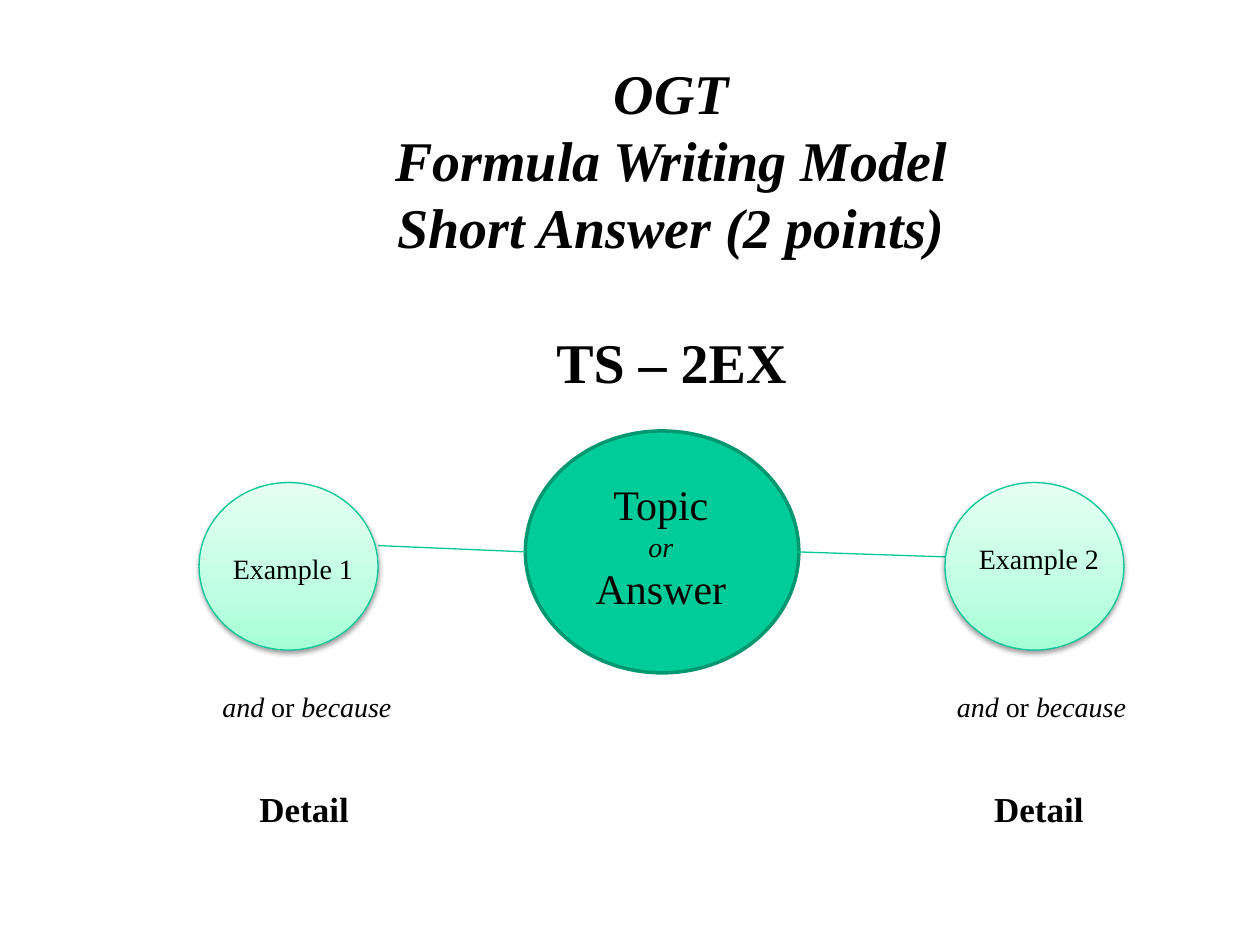
from typing import NamedTuple

from lxml import etree
from pptx import Presentation
from pptx.dml.color import RGBColor
from pptx.enum.shapes import MSO_CONNECTOR, MSO_SHAPE
from pptx.enum.text import MSO_ANCHOR, MSO_AUTO_SIZE, PP_ALIGN
from pptx.oxml import parse_xml
from pptx.oxml.ns import qn
from pptx.util import Inches, Pt

OVAL = MSO_SHAPE.OVAL
LINE = MSO_CONNECTOR.STRAIGHT
LEFT, CENTER = PP_ALIGN.LEFT, PP_ALIGN.CENTER
MIDDLE = MSO_ANCHOR.MIDDLE
FIXED = MSO_AUTO_SIZE.NONE

FONT = "Times New Roman"
BLACK, TEAL, DARK, EDGE = "000000", "00CC99", "009771", "00C896"
MINT = [(0, "A5FFD6"), (35, "BFFFE2"), (100, "E7FFF3")]
NS = 'xmlns:a="http://schemas.openxmlformats.org/drawingml/2006/main"'


class Span(NamedTuple):
    text: str
    size: float
    bold: bool = False
    italic: bool = False


class Branch(NamedTuple):
    name: str
    left: float
    label: tuple[float, float]
    note: tuple[float, float]
    start: tuple[float, float]
    end: tuple[float, float]


BRANCHES = [
    Branch("Example 1", 1.58, (1.75, 4.33), (1.5, 5.42), (3, 4.33), (4.17, 4.38)),
    Branch("Example 2", 7.5, (7.67, 4.25), (7.33, 5.42), (6.33, 4.38), (7.5, 4.42)),
]


def rgb(code: str) -> RGBColor:
    return RGBColor.from_string(code)


def write(para, spans: list[Span], align=LEFT) -> None:
    para.alignment = align
    for span in spans:
        run = para.add_run()
        run.text = span.text
        font = run.font
        font.name, font.size = FONT, Pt(span.size)
        font.bold, font.italic = span.bold, span.italic
        font.color.rgb = rgb(BLACK)


def add_text(slide, left: float, top: float, width: float, height: float,
             lines: list[list[Span]], align=LEFT):
    box = slide.shapes.add_textbox(*map(Inches, (left, top, width, height)))
    frame = box.text_frame
    frame.word_wrap = True
    for i, spans in enumerate(lines):
        para = frame.add_paragraph() if i else frame.paragraphs[0]
        write(para, spans, align)
    return frame


def add_oval(slide, left: float, top: float, width: float, height: float,
             edge: str, weight: float):
    oval = slide.shapes.add_shape(OVAL, *map(Inches, (left, top, width, height)))
    oval.shadow.inherit = False
    oval.fill.solid()
    oval.fill.fore_color.rgb = rgb(TEAL)
    oval.line.color.rgb = rgb(edge)
    oval.line.width = Pt(weight)
    return oval


def shade(oval) -> None:
    """Give the oval a mint gradient and a soft shadow below."""
    props = oval.element.spPr
    stops = "".join(f'<a:gs pos="{pos * 1000}"><a:srgbClr val="{code}"/></a:gs>'
                    for pos, code in MINT)
    grad = parse_xml(f'<a:gradFill {NS} rotWithShape="1"><a:gsLst>{stops}</a:gsLst>'
                     '<a:lin ang="16200000" scaled="0"/></a:gradFill>')
    props.replace(props.find(qn("a:solidFill")), grad)
    props.find(qn("a:effectLst")).append(parse_xml(
        f'<a:outerShdw {NS} blurRad="{Pt(3.1)}" dist="{Pt(1.6)}" dir="5400000" '
        f'rotWithShape="0"><a:srgbClr val="{BLACK}"><a:alpha val="38000"/>'
        '</a:srgbClr></a:outerShdw>'))


def add_line(slide, start: tuple[float, float], end: tuple[float, float]) -> None:
    line = slide.shapes.add_connector(LINE, *map(Inches, start + end))
    line.line.color.rgb = rgb(EDGE)
    line.line.width = Pt(0.75)
    etree.SubElement(line.element.spPr, qn("a:effectLst"))


def add_title(slide) -> None:
    title = slide.shapes.title
    title.left, title.top = Inches(1.08), Inches(1.17)
    title.width, title.height = Inches(8.5), Inches(1.25)
    frame = title.text_frame
    frame.auto_size, frame.vertical_anchor = FIXED, MIDDLE
    lines = ["OGT", "Formula Writing Model", "Short Answer (2 points)", "TS – 2EX"]
    frame.text = "\n".join(lines)
    for para in frame.paragraphs:
        para.alignment = CENTER
        para.line_spacing = Pt(38.4)
        font = para.runs[0].font
        font.name, font.size, font.bold = FONT, Pt(32), True
        font.italic = para.text != lines[-1]
        font.color.rgb = rgb(BLACK)
    frame.paragraphs[-1].space_before = Pt(38.4)


def add_branch(slide, branch: Branch) -> None:
    add_line(slide, branch.start, branch.end)
    shade(add_oval(slide, branch.left, 3.83, 1.42, 1.33, EDGE, 0.75))
    add_text(slide, *branch.label, 1.17, 0.37, [[Span(branch.name, 16)]])
    frame = add_text(slide, *branch.note, 1.83, 1.25, [
        [Span("and ", 16, italic=True), Span("or ", 16),
         Span("because", 16, italic=True)],
        [Span("Detail", 20, bold=True)],
    ])
    first, last = frame.paragraphs
    first._p.get_or_add_pPr().set("marL", str(Pt(12)))
    last.alignment = CENTER
    last.space_before = Pt(37)


def main() -> None:
    deck = Presentation()
    deck.slide_width, deck.slide_height = Inches(10), Inches(7.5)
    slide = deck.slides.add_slide(deck.slide_layouts[5])
    add_title(slide)
    add_oval(slide, 4.17, 3.42, 2.17, 1.92, DARK, 2)
    add_text(slide, 4.58, 3.75, 1.33, 1.18, [
        [Span("Topic", 24)], [Span("or", 16, italic=True)], [Span("Answer", 24)],
    ], CENTER)
    for branch in BRANCHES:
        add_branch(slide, branch)
    deck.save("out.pptx")


if __name__ == "__main__":
    main()
